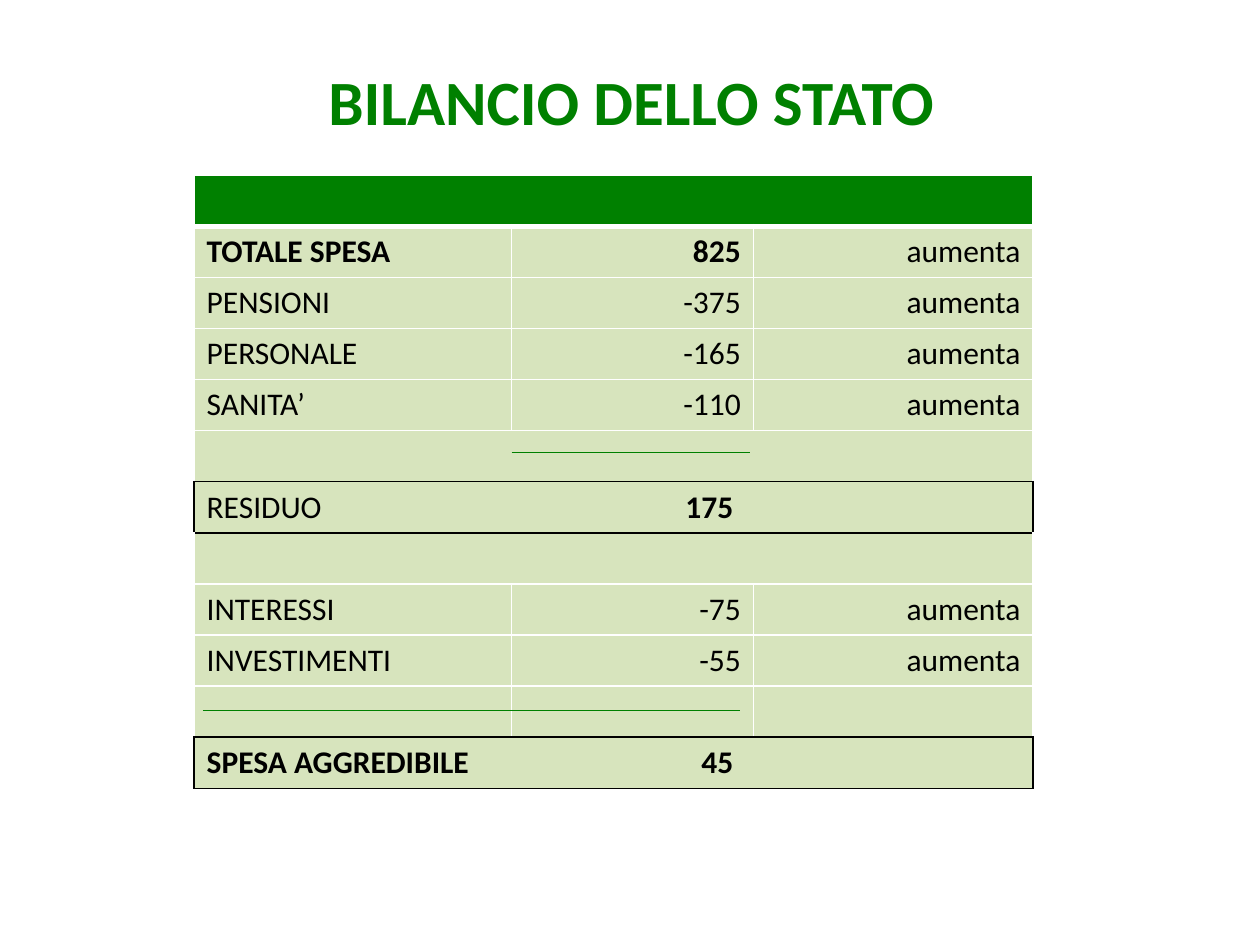
from lxml import etree
from pptx import Presentation
from pptx.dml.color import RGBColor
from pptx.enum.shapes import MSO_CONNECTOR
from pptx.enum.text import MSO_ANCHOR, PP_ALIGN
from pptx.oxml.ns import qn
from pptx.util import Inches, Pt

STRAIGHT = MSO_CONNECTOR.STRAIGHT
MIDDLE = MSO_ANCHOR.MIDDLE
LEFT, CENTER, RIGHT = PP_ALIGN.LEFT, PP_ALIGN.CENTER, PP_ALIGN.RIGHT

GREEN = RGBColor(0x00, 0x80, 0x00)
PALE_GREEN = RGBColor(0xD7, 0xE4, 0xBD)
BLACK = RGBColor(0x00, 0x00, 0x00)
WHITE = RGBColor(0xFF, 0xFF, 0xFF)

COLUMN_WIDTHS = (2.52, 1.92, 2.22)
AMOUNT_TAB = 4.18
HEADER_ROW = 0
BOLD_ROW = 1
BLANK_ROWS = (5, 7)
TOTAL_ROWS = (6, 11)
MERGED_ROWS = (HEADER_ROW, *BLANK_ROWS, *TOTAL_ROWS)
ROW_COUNT = 12

BUDGET = {
    1: ("TOTALE SPESA", "825", "aumenta"),
    2: ("PENSIONI", "-375", "aumenta"),
    3: ("PERSONALE", "-165", "aumenta"),
    4: ("SANITA’", "-110", "aumenta"),
    8: ("INTERESSI", "-75", "aumenta"),
    9: ("INVESTIMENTI", "-55", "aumenta"),
}
# Each span of a total row is its text and whether it is bold.
TOTALS = {
    6: (("RESIDUO\t", False), ("175", True)),
    11: (("SPESA AGGREDIBILE\t45", True),),
}


class BudgetPage:
    font_name = "Calibri"
    body_size = 18
    title_size = 36

    def __init__(self, deck):
        self.page = deck.slides.add_slide(deck.slide_layouts[6])

    def add_span(self, para, text, size, color, bold=False):
        span = para.add_run()
        span.text = text
        span.font.name = self.font_name
        span.font.size = Pt(size)
        span.font.bold = bold
        span.font.color.rgb = color

    def title(self, text, left, top, width, height):
        box = self.page.shapes.add_textbox(
            Inches(left), Inches(top), Inches(width), Inches(height))
        frame = box.text_frame
        frame.word_wrap = True
        frame.vertical_anchor = MIDDLE
        para = frame.paragraphs[0]
        para.alignment = CENTER
        self.add_span(para, text, self.title_size, GREEN, True)

    def rule(self, start_x, end_x, y):
        line = self.page.shapes.add_connector(
            STRAIGHT, Inches(start_x), Inches(y), Inches(end_x), Inches(y))
        line.line.color.rgb = GREEN
        line.line.width = Pt(0.75)
        etree.SubElement(line._element.spPr, qn("a:effectLst"))

    def cell_borders(self, cell, row):
        side = BLACK if row in TOTAL_ROWS else WHITE
        top, bottom = (
            (BLACK if {edge - 1, edge} & set(TOTAL_ROWS) else WHITE,
             3 if edge == HEADER_ROW + 1 else 1)
            for edge in (row, row + 1))
        borders = {"L": (side, 1), "R": (side, 1), "T": top, "B": bottom}
        properties = cell._tc.get_or_add_tcPr()
        for name, (color, points) in borders.items():
            border = etree.SubElement(
                properties, qn(f"a:ln{name}"), w=str(Pt(points)))
            fill = etree.SubElement(border, qn("a:solidFill"))
            etree.SubElement(fill, qn("a:srgbClr"), val=str(color))

    def amount_tab(self, para):
        """Right-align what follows a tab in a merged total row."""
        tabs = etree.SubElement(para._p.get_or_add_pPr(), qn("a:tabLst"))
        etree.SubElement(
            tabs, qn("a:tab"), pos=str(Inches(AMOUNT_TAB)), algn="r")

    def budget_table(self, left, top, width, height):
        table = self.page.shapes.add_table(
            ROW_COUNT, len(COLUMN_WIDTHS), Inches(left), Inches(top),
            Inches(width), Inches(height)).table
        table.horz_banding = False
        for column, column_width in zip(table.columns, COLUMN_WIDTHS):
            column.width = Inches(column_width)
        for row in range(ROW_COUNT):
            for cell in table.rows[row].cells:
                self.cell_borders(cell, row)
                cell.fill.solid()
                cell.fill.fore_color.rgb = (
                    GREEN if row == HEADER_ROW else PALE_GREEN)
            if row in MERGED_ROWS:
                table.cell(row, 0).merge(table.cell(row, 2))
        for row, texts in BUDGET.items():
            for column, text in enumerate(texts):
                para = table.cell(row, column).text_frame.paragraphs[0]
                para.alignment = RIGHT if column else LEFT
                bold = row == BOLD_ROW and column < 2
                self.add_span(para, text, self.body_size, BLACK, bold)
        for row, spans in TOTALS.items():
            para = table.cell(row, 0).text_frame.paragraphs[0]
            self.amount_tab(para)
            for text, bold in spans:
                self.add_span(para, text, self.body_size, BLACK, bold)


def main():
    deck = Presentation()
    deck.slide_width, deck.slide_height = Inches(10), Inches(7.5)
    page = BudgetPage(deck)
    page.budget_table(1.54, 1.39, sum(COLUMN_WIDTHS), 4.87)
    page.title("BILANCIO DELLO STATO", 0.51, 0.36, 9, 0.87)
    page.rule(1.61, 5.87, 5.64)
    page.rule(4.06, 5.95, 3.59)
    deck.save("out.pptx")


if __name__ == "__main__":
    main()
